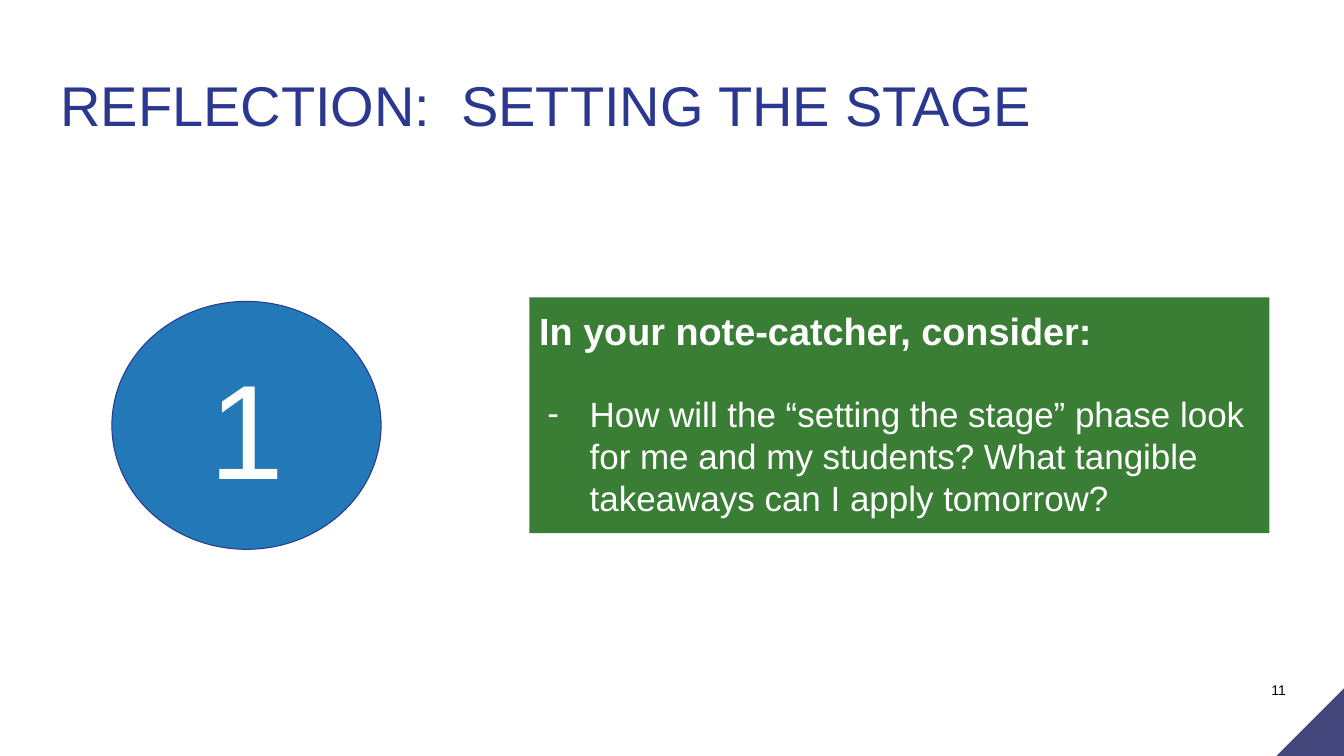
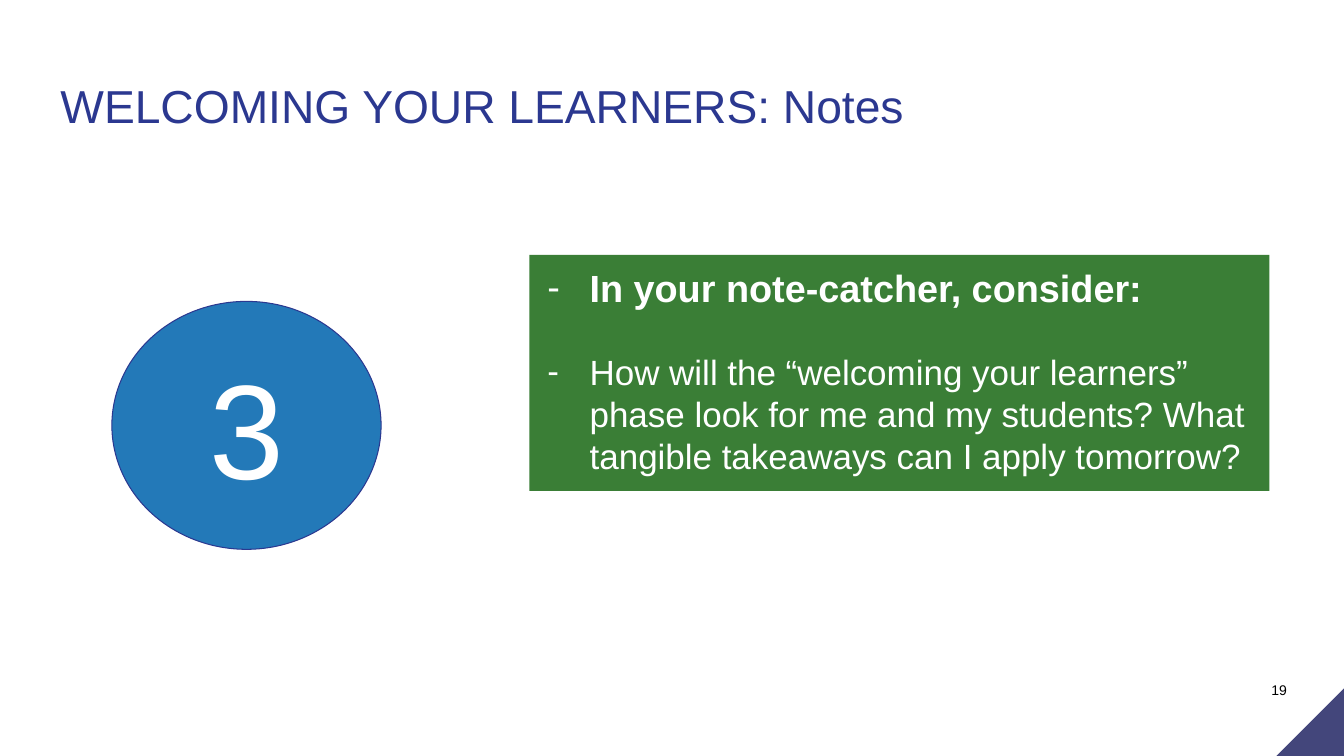
from lxml.etree import SubElement
from pptx import Presentation
from pptx.dml.color import RGBColor
from pptx.enum.shapes import MSO_SHAPE
from pptx.enum.text import MSO_ANCHOR, PP_ALIGN
from pptx.oxml.ns import qn
from pptx.util import Inches, Pt

FONT = "Arial"
NAVY = RGBColor(0x2B, 0x38, 0x90)
INDIGO = RGBColor(0x43, 0x46, 0x7B)
BLUE = RGBColor(0x23, 0x79, 0xB8)
GREEN = RGBColor(0x3A, 0x7E, 0x36)
WHITE = RGBColor(0xFF, 0xFF, 0xFF)
BLACK = RGBColor(0, 0, 0)

SLIDE_W, SLIDE_H = 13.33, 7.5
CORNER = 0.67
TITLE_BOX = (0, 0.58, SLIDE_W, 1)
NUMBER_BOX = (12.61, 6.76, 0.67, 0.68)
CORNER_BOX = (SLIDE_W - CORNER, SLIDE_H - CORNER, CORNER, CORNER)
BADGE_BOX = (1.11, 2.99, 2.67, 2.46)
PROMPT_LEFT, PROMPT_W, PROMPT_H = 5.25, 7.34, 2.34
HEADING = "In your note-catcher, consider:"

REFLECTIONS = [
    {
        "title": "REFLECTION:  SETTING THE STAGE",
        "title_size": 40,
        "page": "11",
        "step": "1",
        "phase": "setting the stage",
        "prompt_top": 2.95,
        "bullet_heading": False,
    },
    {
        "title": "WELCOMING YOUR LEARNERS: Notes",
        "title_size": 33,
        "page": "19",
        "step": "3",
        "phase": "welcoming your learners",
        "prompt_top": 2.53,
        "bullet_heading": True,
    },
]


def add_box(slide, box, kind=None, fill=None, line=None):
    """Add a text box, or a filled preset shape when a kind is given."""
    at = [Inches(v) for v in box]
    if kind is None:
        return slide.shapes.add_textbox(*at)
    s = slide.shapes.add_shape(kind, *at)
    s.shadow.inherit = False
    s.fill.solid()
    s.fill.fore_color.rgb = fill
    if line is None:
        s.line.fill.background()
    else:
        s.line.color.rgb = line
        s.line.width = Pt(0.75)
    return s


def set_frame(s, side=0, top=0, anchor=MSO_ANCHOR.TOP):
    """Set wrapping, margins and anchor, and return the text frame."""
    tf = s.text_frame
    tf.word_wrap = True
    tf.margin_left = tf.margin_right = Inches(side)
    tf.margin_top = tf.margin_bottom = Inches(top)
    tf.vertical_anchor = anchor
    return tf


def set_text(p, text, size, color, bold=False, align=PP_ALIGN.LEFT):
    """Fill a paragraph with text and format its run."""
    p.text = text
    p.alignment = align
    font = p.runs[0].font
    font.name = FONT
    font.size = Pt(size)
    font.bold = bold
    font.color.rgb = color


def add_dash(p):
    """Give a paragraph a white dash bullet with a hanging indent."""
    pPr = p._p.get_or_add_pPr()
    pPr.set("marL", str(Inches(0.5)))
    pPr.set("indent", str(Inches(-0.42)))
    color = SubElement(pPr, qn("a:buClr"))
    SubElement(color, qn("a:srgbClr")).set("val", str(WHITE))
    SubElement(pPr, qn("a:buFont")).set("typeface", FONT)
    SubElement(pPr, qn("a:buChar")).set("char", "-")


def add_title(slide, box, text, size):
    """Add the slide title."""
    tf = set_frame(add_box(slide, box), side=0.6, anchor=MSO_ANCHOR.MIDDLE)
    p = tf.paragraphs[0]
    set_text(p, text, size, NAVY)
    p.line_spacing = 0.9


def add_corner(slide, box):
    """Add the triangle in the lower right corner."""
    s = add_box(slide, box, MSO_SHAPE.RIGHT_TRIANGLE, INDIGO)
    s._element.spPr.find(qn("a:xfrm")).set("flipH", "1")


def add_page_number(slide, box, page):
    """Add the page number."""
    tf = set_frame(add_box(slide, box))
    set_text(tf.paragraphs[0], page, 10, BLACK)


def add_badge(slide, box, step):
    """Add the round badge with the step number."""
    s = add_box(slide, box, MSO_SHAPE.OVAL, BLUE, NAVY)
    tf = set_frame(s, 0.1, 0.1, MSO_ANCHOR.MIDDLE)
    set_text(tf.paragraphs[0], step, 96, WHITE, align=PP_ALIGN.CENTER)


def add_prompt(slide, box, phase, bullet_heading):
    """Add the green panel with the heading and the question."""
    tf = set_frame(add_box(slide, box, MSO_SHAPE.RECTANGLE, GREEN), 0.1, 0.1)
    heading = tf.paragraphs[0]
    set_text(heading, HEADING, 27, WHITE, bold=True)
    if bullet_heading:
        add_dash(heading)
    question = tf.add_paragraph()
    set_text(
        question,
        f"How will the “{phase}” phase look for me and my students? "
        "What tangible takeaways can I apply tomorrow?",
        25,
        WHITE,
    )
    question.space_before = Pt(28.7)
    add_dash(question)


def add_reflection(prs, item):
    """Add one reflection slide."""
    slide = prs.slides.add_slide(prs.slide_layouts[6])
    add_corner(slide, CORNER_BOX)
    add_title(slide, TITLE_BOX, item["title"], item["title_size"])
    add_page_number(slide, NUMBER_BOX, item["page"])
    add_badge(slide, BADGE_BOX, item["step"])
    prompt_box = (PROMPT_LEFT, item["prompt_top"], PROMPT_W, PROMPT_H)
    add_prompt(slide, prompt_box, item["phase"], item["bullet_heading"])


def main():
    """Build and save the presentation."""
    prs = Presentation()
    prs.slide_width = Inches(SLIDE_W)
    prs.slide_height = Inches(SLIDE_H)
    for item in REFLECTIONS:
        add_reflection(prs, item)
    prs.save("out.pptx")


if __name__ == "__main__":
    main()
